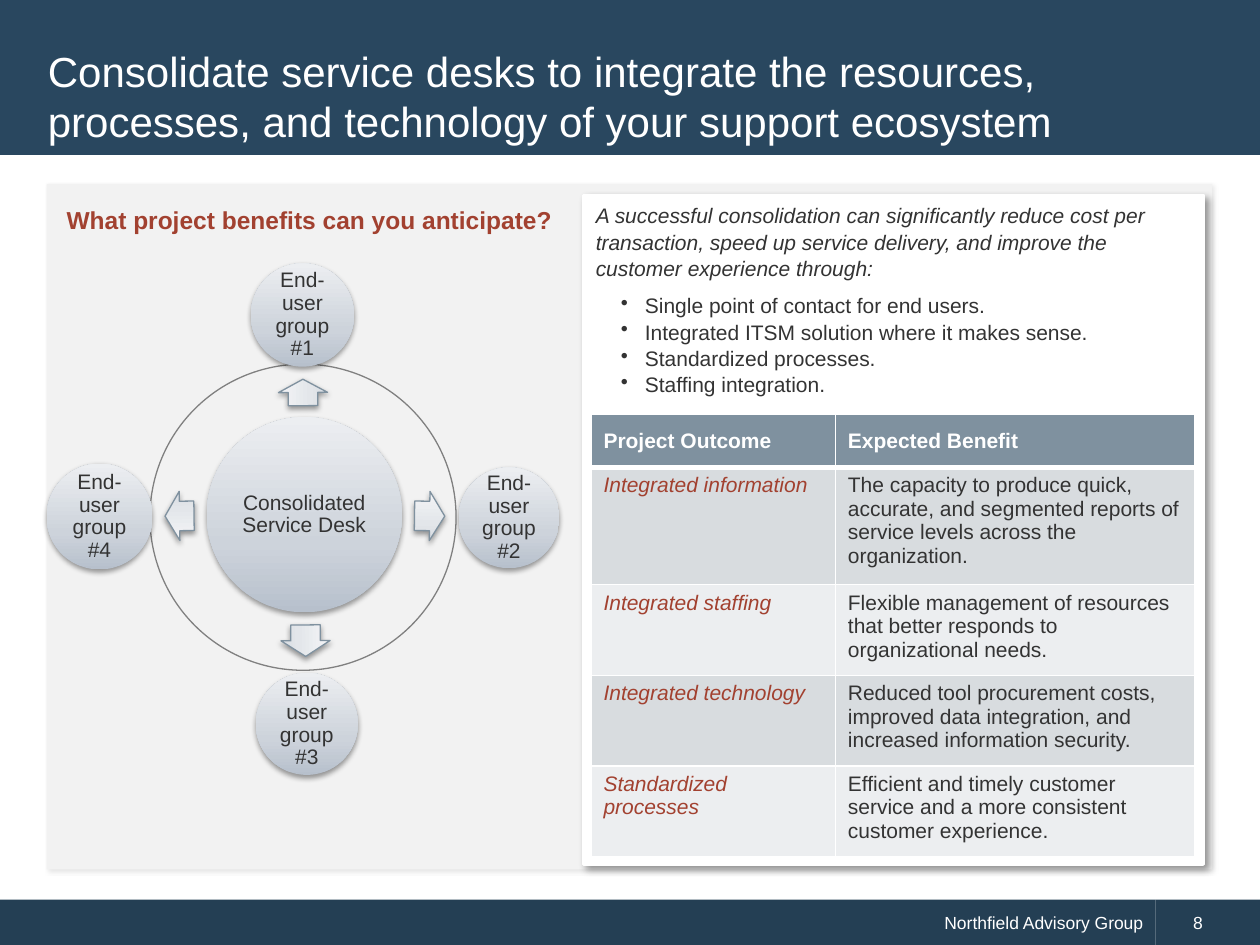
from dataclasses import dataclass

from lxml.etree import SubElement
from pptx import Presentation
from pptx.dml.color import RGBColor
from pptx.enum.shapes import MSO_SHAPE
from pptx.enum.text import MSO_ANCHOR, PP_ALIGN
from pptx.oxml.ns import qn
from pptx.util import Inches, Pt


@dataclass(frozen=True)
class Theme:
    font: str = "Arial"
    white: str = "FFFFFF"
    ink: str = "333333"
    red: str = "A24130"
    header: str = "29475F"
    footer: str = "243F54"
    panel: str = "F2F2F2"
    ring: str = "808080"
    slate: str = "7F919F"
    bands: tuple = ("D8DCDF", "ECEEF0")
    ball: tuple = ((0, "B7C0CC"), (35, "CDD3DB"), (100, "ECEEF1"))
    arrow: tuple = ((0, "D7DCE2"), (35, "E3E6EA"), (100, "F4F5F7"))
    # Shadows: opacity in percent, blur and distance in points, angle
    soft: tuple = (10, 2, 2, 45)
    deep: tuple = (40, 4, 3, 45)
    drop: tuple = (38, 3.1, 1.6, 90)
    title: int = 24
    head: int = 14
    body: int = 12
    small: int = 10


theme = Theme()
deck = Presentation()
deck.slide_width, deck.slide_height = Inches(10), Inches(7.5)
slide = deck.slides.add_slide(deck.slide_layouts[5])
shapes = slide.shapes


def write(frame, text, size=theme.body, color=theme.ink, bold=False, italic=False,
          align=PP_ALIGN.LEFT, anchor=MSO_ANCHOR.TOP, pad=None, lead=1.0,
          before=0, after=0, bullet=False):
    """Add a paragraph, filling the first one if the frame is empty."""
    frame.word_wrap = True
    frame.vertical_anchor = anchor
    if pad is not None:
        frame.margin_left = frame.margin_right = Inches(pad)
        frame.margin_top = frame.margin_bottom = Inches(pad)
    para = frame.add_paragraph() if frame.text else frame.paragraphs[0]
    para.alignment, para.line_spacing = align, lead
    para.space_before, para.space_after = Pt(before), Pt(after)
    if bullet:
        props = para._p.get_or_add_pPr()
        props.set("marL", str(Inches(0.39)))
        props.set("indent", str(Inches(-0.19)))
        SubElement(props, qn("a:buChar"), char="•")
    run = para.add_run()
    run.text = text
    font = run.font
    font.name, font.size, font.bold, font.italic = theme.font, Pt(size), bold, italic
    font.color.rgb = RGBColor.from_string(color)


def draw(kind, at, fill=None, line=None, width=0.75, shadow=None):
    """Add a shape; fill is a colour, a tuple of gradient stops or None."""
    shape = shapes.add_shape(kind, *map(Inches, at))
    if fill is None:
        shape.fill.background()
    elif isinstance(fill, str):
        shape.fill.solid()
        shape.fill.fore_color.rgb = RGBColor.from_string(fill)
    else:
        shape.fill.gradient()
        shape.fill.gradient_angle = 90
        stops = shape._element.spPr.find(".//" + qn("a:gsLst"))
        stops.clear()
        for pos, color in fill:
            stop = SubElement(stops, qn("a:gs"), pos=str(pos * 1000))
            SubElement(stop, qn("a:srgbClr"), val=color)
    if line:
        shape.line.color.rgb = RGBColor.from_string(line)
        shape.line.width = Pt(width)
    else:
        shape.line.fill.background()
    shape.shadow.inherit = False
    if shadow:
        alpha, blur, dist, angle = shadow
        effects = shape._element.spPr.find(qn("a:effectLst"))
        outer = SubElement(effects, qn("a:outerShdw"), blurRad=str(Pt(blur)),
                           dist=str(Pt(dist)), dir=str(angle * 60000),
                           algn="ctr", rotWithShape="0")
        tint = SubElement(outer, qn("a:srgbClr"), val="000000")
        SubElement(tint, qn("a:alpha"), val=str(alpha * 1000))
    return shape


# Header, footer and title
rect, oval = MSO_SHAPE.RECTANGLE, MSO_SHAPE.OVAL
source = draw(rect, (0, 7.14, 9.17, 0.37), theme.footer)
write(source.text_frame, "Northfield Advisory Group", theme.small, theme.white,
      align=PP_ALIGN.RIGHT, anchor=MSO_ANCHOR.MIDDLE)
number = draw(rect, (9.17, 7.14, 0.83, 0.37), theme.footer)
number.text_frame.margin_left = Inches(0.3)
write(number.text_frame, "8", theme.small, theme.white, anchor=MSO_ANCHOR.MIDDLE)
draw(rect, (0, 0, 10, 1.23), theme.header)
draw(rect, (0.37, 1.46, 9.25, 5.44), theme.panel, shadow=theme.soft)

title = shapes.title
title.left, title.top = Inches(0.28), Inches(0.28)
title.width, title.height = Inches(9.43), Inches(0.96)
write(title.text_frame, "Consolidate service desks to integrate the resources, "
      "processes, and technology of your support ecosystem",
      theme.title, theme.white, anchor=MSO_ANCHOR.MIDDLE)
shapes._spTree.append(title._element)  # in front of the header band

# Benefits card
card = draw(rect, (4.63, 1.55, 4.92, 5.31), theme.white, theme.white, 2, theme.deep)
write(card.text_frame, "A successful consolidation can significantly reduce cost per "
      "transaction, speed up service delivery, and improve the customer experience "
      "through:", italic=True, lead=1.05, before=6, after=6)
for point in ("Single point of contact for end users.",
              "Integrated ITSM solution where it makes sense.",
              "Standardized processes.",
              "Staffing integration."):
    write(card.text_frame, point, lead=1.05, bullet=True)

# Service desk hub: ring, balls and arrows
draw(oval, (1.19, 2.89, 2.43, 2.43), line=theme.ring)
balls = (
    ("Consolidated Service Desk", 1.64, 3.31, 1.55),
    ("End-user group #1", 1.99, 2.09, 0.82),
    ("End-user group #2", 3.64, 3.71, 0.8),
    ("End-user group #3", 2.03, 5.34, 0.81),
    ("End-user group #4", 0.37, 3.68, 0.84),
)
for label, left, top, size in balls:
    ball = draw(oval, (left, top, size, size), theme.ball, shadow=theme.drop)
    write(ball.text_frame, label, align=PP_ALIGN.CENTER, anchor=MSO_ANCHOR.MIDDLE,
          pad=0.02, lead=0.9)
for left, top, width, turn in ((2.3, 2.92, 0.21, 269.6), (3.29, 3.9, 0.24, 0.8),
                               (2.3, 4.89, 0.25, 89.5), (1.31, 3.9, 0.23, 179.2)):
    arrow = draw(MSO_SHAPE.RIGHT_ARROW, (left, top, width, 0.39), theme.arrow,
                 theme.slate, shadow=theme.drop)
    arrow.adjustments[0], arrow.adjustments[1] = 0.6, 0.5
    arrow.rotation = turn

head = shapes.add_textbox(Inches(0.43), Inches(1.58), Inches(4.07), Inches(0.34))
write(head.text_frame, "What project benefits can you anticipate?", theme.head,
      theme.red, bold=True, before=3, after=3)

# Outcome table
rows = (
    ("Project Outcome", "Expected Benefit"),
    ("Integrated information", "The capacity to produce quick, accurate, and segmented "
     "reports of service levels across the organization."),
    ("Integrated staffing", "Flexible management of resources that better responds to "
     "organizational needs."),
    ("Integrated technology", "Reduced tool procurement costs, improved data "
     "integration, and increased information security."),
    ("Standardized processes", "Efficient and timely customer service and a more "
     "consistent customer experience."),
)
table = shapes.add_table(len(rows), 2, Inches(4.69), Inches(3.29),
                         Inches(4.79), Inches(3.51)).table
for col, width in zip(table.columns, (1.94, 2.85)):
    col.width = Inches(width)
for row, height in zip(table.rows, (0.42, 0.93, 0.72, 0.72, 0.72)):
    row.height = Inches(height)
for r, texts in enumerate(rows):
    for c, text in enumerate(texts):
        cell = table.cell(r, c)
        if r == 0:
            fill, look = theme.slate, dict(color=theme.white, bold=True)
            cell.vertical_anchor = MSO_ANCHOR.MIDDLE
        else:
            fill = theme.bands[(r - 1) % 2]
            look = dict(color=theme.ink) if c else dict(color=theme.red, italic=True)
        write(cell.text_frame, text, anchor=cell.vertical_anchor, **look)
        props = cell._tc.get_or_add_tcPr()
        for side in "LRTB":
            thick = 3 if (r, side) in ((0, "B"), (1, "T")) else 1
            edge = SubElement(props, qn(f"a:ln{side}"), w=str(Pt(thick)))
            paint = SubElement(edge, qn("a:solidFill"))
            SubElement(paint, qn("a:srgbClr"), val=theme.white)
        cell.fill.solid()
        cell.fill.fore_color.rgb = RGBColor.from_string(fill)

deck.save("out.pptx")
